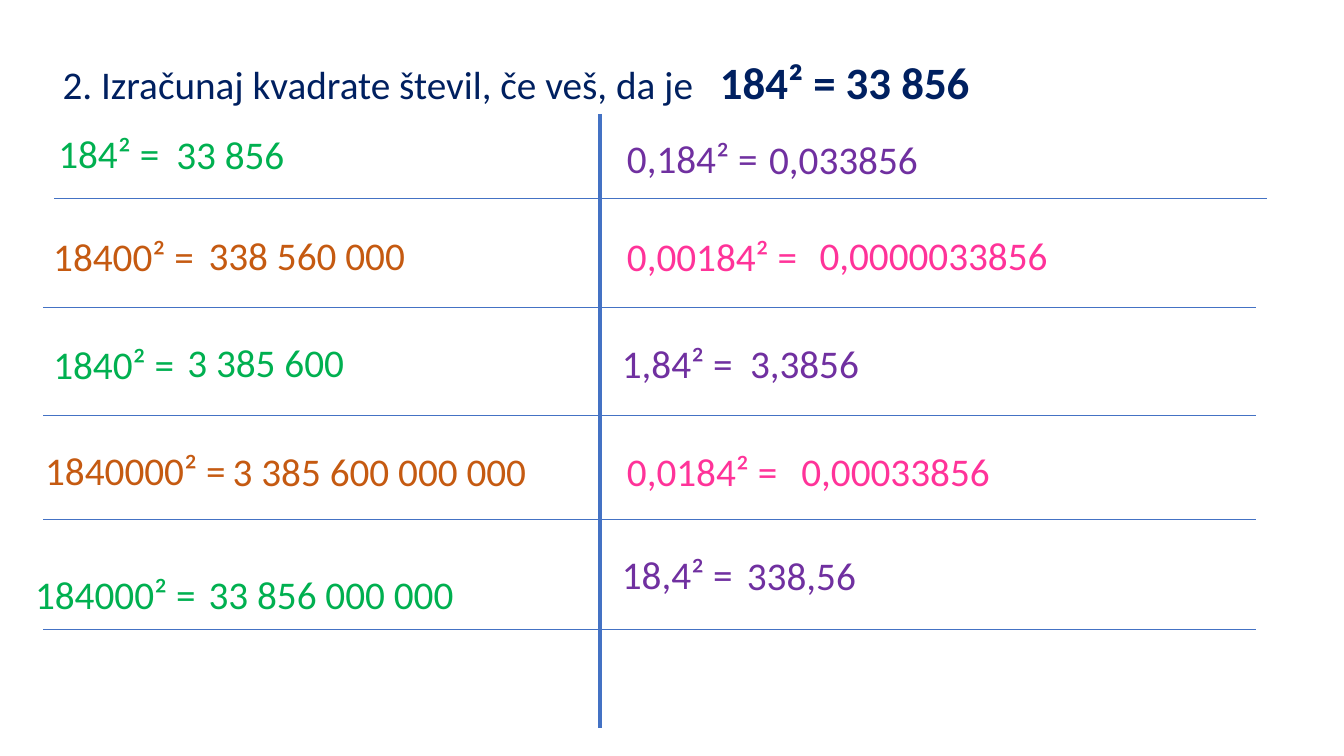
"""Build a slide of squares derived from 184² = 33 856."""
from lxml.etree import SubElement
from pptx import Presentation
from pptx.dml.color import RGBColor
from pptx.enum.shapes import MSO_CONNECTOR
from pptx.enum.text import MSO_AUTO_SIZE
from pptx.oxml.ns import qn
from pptx.util import Inches, Pt

NAVY, BLUE = "002060", "4472C4"
GREEN, ORANGE, PURPLE, PINK = "00B050", "C55A11", "7030A0", "FF3399"


def add_text(left, top, width, height, parts, color):
    box = slide.shapes.add_textbox(Inches(left), Inches(top), Inches(width), Inches(height))
    frame = box.text_frame
    frame.word_wrap = True
    frame.auto_size = MSO_AUTO_SIZE.SHAPE_TO_FIT_TEXT
    for text, size, bold in parts:
        run = frame.paragraphs[0].add_run()
        run.text = text
        run.font.name = "Calibri"
        run.font.size = Pt(size)
        run.font.bold = bold
        run.font.color.rgb = RGBColor.from_string(color)
    return frame


def add_line(start_x, start_y, end_x, end_y, width):
    line = slide.shapes.add_connector(
        MSO_CONNECTOR.STRAIGHT, Inches(start_x), Inches(start_y), Inches(end_x), Inches(end_y))
    line.line.color.rgb = RGBColor.from_string(BLUE)
    line.line.width = Pt(width)
    SubElement(line._element.spPr, qn("a:effectLst"))


presentation = Presentation()
presentation.slide_width = Inches(13.33)
presentation.slide_height = Inches(7.5)
slide = presentation.slides.add_slide(presentation.slide_layouts[6])

title = add_text(0.43, 0.49, 9.39, 0.64, [
    ("2. Izračunaj kvadrate števil, če veš, da je\t", 28, False),
    ("184² = 33 856", 32, True)], NAVY)
title.margin_left = Inches(0.19)
tab_list = SubElement(title.paragraphs[0]._p.get_or_add_pPr(), qn("a:tabLst"))
SubElement(tab_list, qn("a:tab"), pos=str(Inches(6.52)), algn="l")

for left, top in [(0.54, 1.97), (0.43, 3.05), (0.43, 4.12), (0.43, 5.15), (0.43, 6.24)]:
    add_line(left, top, left + 12.03, top, 0.5)
add_line(5.95, 1.13, 5.95, 7.22, 3)

equations = [
    (GREEN, "184² =", 0.48, 1.23, 1.41, "33 856", 1.65, 1.24, 1.42),
    (ORANGE, "18400² =", 0.43, 2.26, 1.77, "338 560 000", 1.97, 2.25, 3.11),
    (GREEN, "1840² =", 0.43, 3.33, 1.41, "3 385 600", 1.76, 3.31, 2.01),
    (ORANGE, "1840000² =", 0.35, 4.38, 2.23, "3 385 600 000 000", 2.21, 4.39, 3.24),
    (GREEN, "184000² =", 0.25, 5.61, 1.96, "33 856 000 000", 1.97, 5.61, 3.11),
    (PURPLE, "0,184² =", 6.12, 1.28, 1.6, "0,033856", 7.53, 1.29, 3.11),
    (PINK, "0,00184² =", 6.12, 2.26, 2.19, "0,0000033856", 8.03, 2.25, 3.11),
    (PURPLE, "1,84² =", 6.07, 3.32, 1.6, "3,3856", 7.34, 3.32, 3.11),
    (PINK, "0,0184² =", 6.12, 4.39, 2.19, "0,00033856", 7.85, 4.39, 3.11),
    (PURPLE, "18,4² =", 6.07, 5.41, 1.6, "338,56", 7.31, 5.42, 3.11),
]
for color, *equation in equations:
    for text, left, top, width in (equation[:4], equation[4:]):
        add_text(left, top, width, 0.57, [(text, 28, False)], color)

presentation.save("out.pptx")
